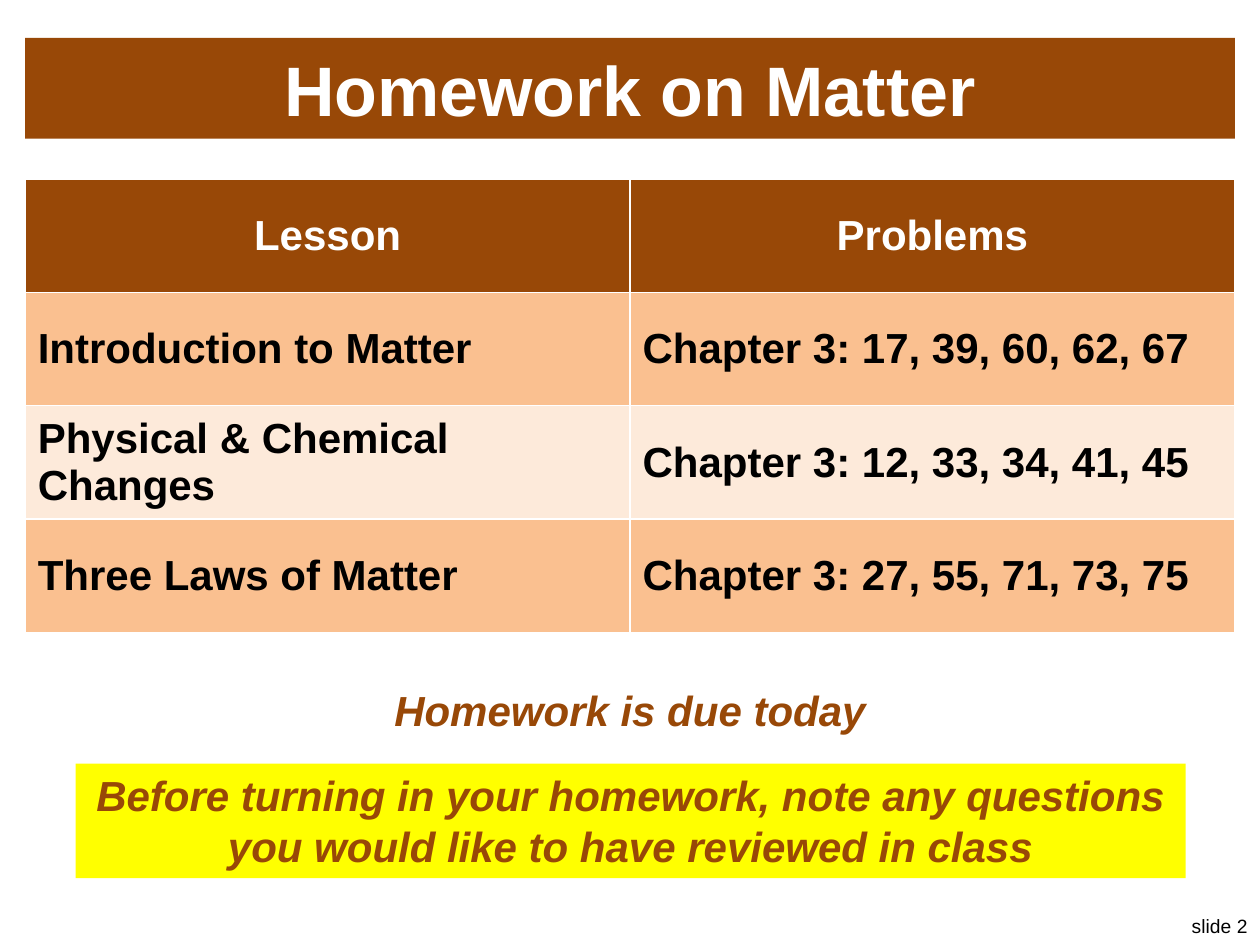
from pptx import Presentation
from pptx.dml.color import RGBColor
from pptx.enum.shapes import MSO_SHAPE
from pptx.enum.text import MSO_ANCHOR, PP_ALIGN
from pptx.util import Inches, Pt

BROWN = RGBColor(0x98, 0x48, 0x07)
ORANGE = RGBColor(0xFA, 0xC0, 0x90)
CREAM = RGBColor(0xFD, 0xEA, 0xDA)
YELLOW = RGBColor(0xFF, 0xFF, 0x00)
WHITE = RGBColor(0xFF, 0xFF, 0xFF)
BLACK = RGBColor(0x00, 0x00, 0x00)

ROWS = [
    ("Lesson", "Problems"),
    ("Introduction to Matter", "Chapter 3: 17, 39, 60, 62, 67"),
    ("Physical & Chemical Changes", "Chapter 3: 12, 33, 34, 41, 45"),
    ("Three Laws of Matter", "Chapter 3: 27, 55, 71, 73, 75"),
]


def fill_solid(obj, color):
    """Give a shape or cell a solid fill."""
    obj.fill.solid()
    obj.fill.fore_color.rgb = color


def write(tf, text, size, color, align=PP_ALIGN.CENTER, bold=True, italic=False):
    """Write one formatted run into the first paragraph of a text frame."""
    p = tf.paragraphs[0]
    p.alignment = align
    r = p.add_run()
    r.text = text
    r.font.name = "Arial"
    r.font.size = Pt(size)
    r.font.bold = bold
    r.font.italic = italic
    r.font.color.rgb = color


def add_title(slide, box, text):
    """Turn the title placeholder into a brown banner."""
    sp = slide.shapes.title
    sp.left, sp.top, sp.width, sp.height = box
    fill_solid(sp, BROWN)
    sp.text_frame.vertical_anchor = MSO_ANCHOR.MIDDLE
    write(sp.text_frame, text, 40, WHITE)


def add_homework_table(slide, box, rows):
    """Add the homework table with a header and banded rows."""
    table = slide.shapes.add_table(len(rows), len(rows[0]), *box).table
    for i, row in enumerate(rows):
        for j, text in enumerate(row):
            cell = table.cell(i, j)
            cell.vertical_anchor = MSO_ANCHOR.MIDDLE
            if i == 0:
                fill_solid(cell, BROWN)
                write(cell.text_frame, text, 24, WHITE)
            else:
                fill_solid(cell, ORANGE if i % 2 else CREAM)
                write(cell.text_frame, text, 24, BLACK, PP_ALIGN.LEFT)


def add_due_note(slide, box, text):
    """Add the line that says when the homework is due."""
    tf = slide.shapes.add_textbox(*box).text_frame
    tf.word_wrap = False
    write(tf, text, 24, BROWN, italic=True)


def add_reminder(slide, box, text):
    """Add the yellow reminder panel."""
    sp = slide.shapes.add_shape(MSO_SHAPE.RECTANGLE, *box)
    sp.shadow.inherit = False
    fill_solid(sp, YELLOW)
    sp.line.fill.background()
    tf = sp.text_frame
    tf.word_wrap = True
    tf.vertical_anchor = MSO_ANCHOR.TOP
    write(tf, text, 24, BROWN, italic=True)


def add_slide_label(slide, box, text):
    """Add the slide number in the lower right corner."""
    tf = slide.shapes.add_textbox(*box).text_frame
    tf.word_wrap = False
    write(tf, text, 11, BLACK, PP_ALIGN.RIGHT, bold=False)


def inch_box(*lengths):
    """Convert left, top, width and height to inches."""
    return [Inches(n) for n in lengths]


def main():
    """Build and save the slide."""
    prs = Presentation()
    prs.slide_width, prs.slide_height = Inches(10), Inches(7.5)
    slide = prs.slides.add_slide(prs.slide_layouts[5])
    add_slide_label(slide, inch_box(9.25, 7.21, 0.75, 0.29), "slide 2")
    add_title(slide, inch_box(0.2, 0.3, 9.6, 0.8), "Homework on Matter")
    add_homework_table(slide, inch_box(0.2, 1.42, 9.6, 3.6), ROWS)
    add_due_note(slide, inch_box(3.01, 5.38, 3.98, 0.5), "Homework is due today")
    add_reminder(
        slide,
        inch_box(0.6, 6.06, 8.81, 0.91),
        "Before turning in your homework, note any questions "
        "you would like to have reviewed in class",
    )
    prs.save("out.pptx")


if __name__ == "__main__":
    main()
